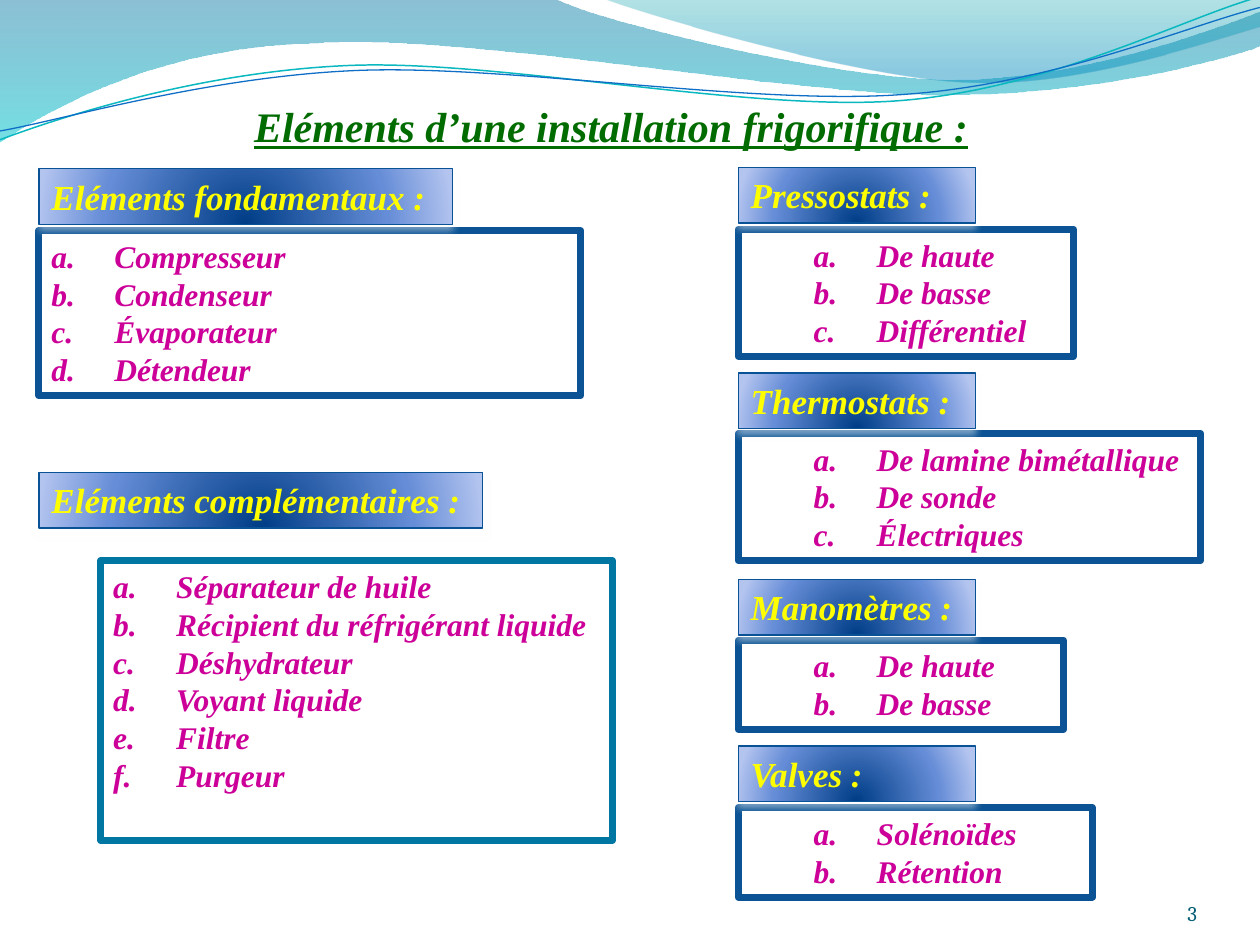
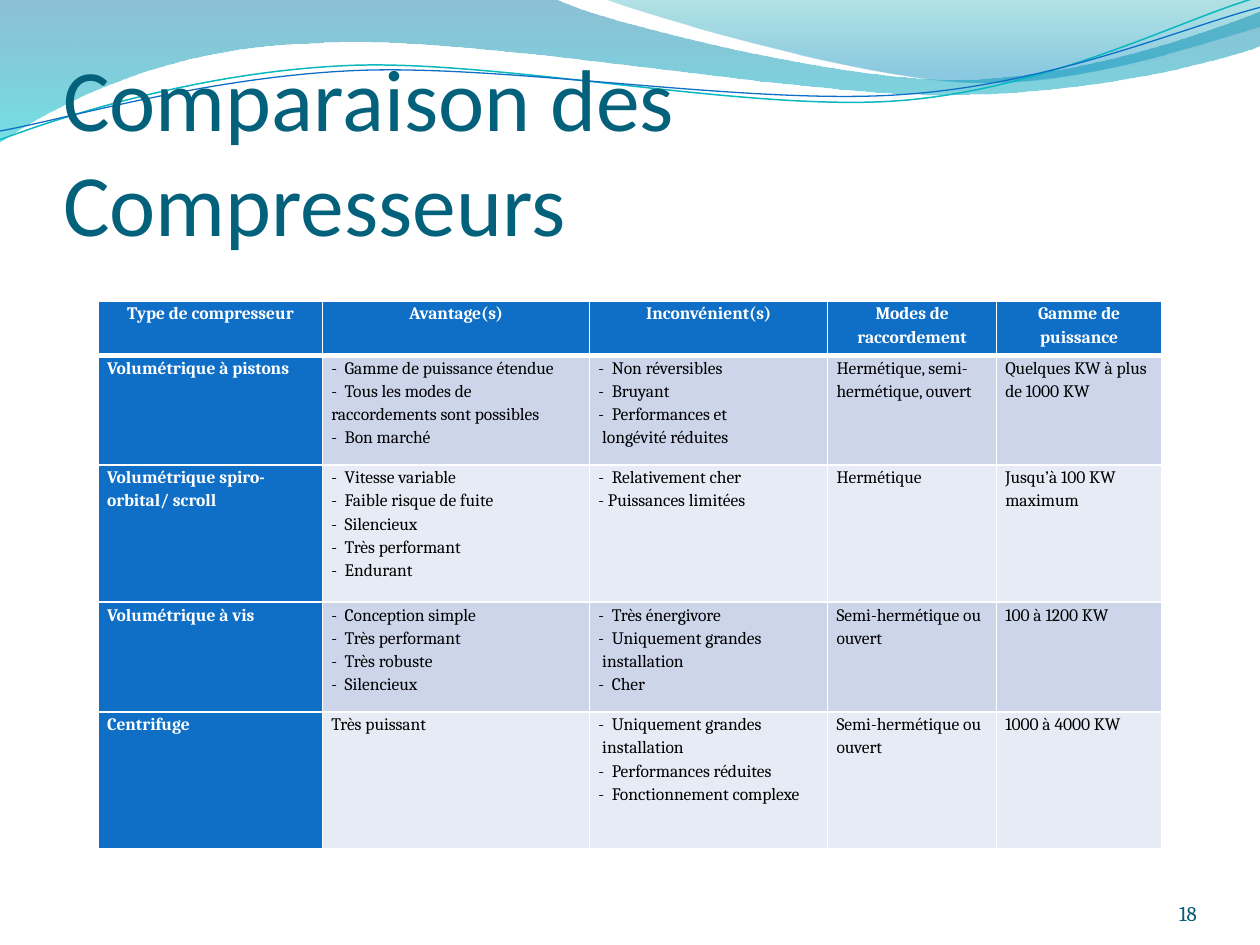
from math import cos, radians, sin

from lxml import etree
from pptx import Presentation
from pptx.dml.color import RGBColor
from pptx.enum.shapes import MSO_SHAPE
from pptx.enum.text import MSO_ANCHOR, MSO_AUTO_SIZE, PP_ALIGN
from pptx.oxml import parse_xml
from pptx.oxml.ns import nsdecls, qn
from pptx.util import Inches, Pt

RECT = MSO_SHAPE.RECTANGLE
TOP, BOTTOM = MSO_ANCHOR.TOP, MSO_ANCHOR.BOTTOM
LEFT, CENTER, RIGHT, JUSTIFY = PP_ALIGN.LEFT, PP_ALIGN.CENTER, PP_ALIGN.RIGHT, PP_ALIGN.JUSTIFY
NO_FIT = MSO_AUTO_SIZE.NONE
DASH = "-" + chr(160) + " "

COLORS = {
    "title": "04617B", "green": "006C00", "number": "045D75", "yellow": "FFFF00",
    "magenta": "CC0099", "box": "0B5394", "teal_box": "0076A3", "label_line": "095295",
    "white": "FFFFFF", "black": "000000", "blue": "0F6FC6",
    "band_dark": "CCD5EA", "band_light": "E7EBF5", "wave_line": "0AB8BF",
}
LABEL_STOPS = [(0, "003D87", 100), (68, "668DD7", 100), (100, "B3C4EF", 100)]
LABEL_PATH = '<a:path path="circle"><a:fillToRect l="50000" t="130000" r="50000" b="-30000"/></a:path>'
DOWN = '<a:lin ang="5400000" scaled="0"/>'

WAVES = [
    ([(0, 0), (4.4, -0.01),
      (4.76, 0.17, 6.64, 0.63, 7.58, 0.63), (8.53, 0.63, 9.58, 0.26, 10, 0.09), (10.01, 0.36),
      (9.83, 0.44, 8.7, 0.76, 7.46, 0.75), (6.22, 0.75, 3.82, 0.28, 2.57, 0.34),
      (1.29, 0.36, 0.46, 0.83, -0.01, 1.13)],
     [(0, "0074A1", 45), (100, "00C6CF", 55)]),
    ([(4.79, -0.01), (5.09, 0.11, 6.82, 0.62, 7.69, 0.65),
      (8.56, 0.69, 9.61, 0.32, 10, 0.21), (10, 0)],
     [(0, "00A1A9", 30), (80, "008BBF", 45)]),
]
TILT = 2.7
WAVE_LINES = [
    ([(0, 1.11), (0.48, 0.93, 1.58, 0.57, 2.77, 0.52), (3.95, 0.47, 5.93, 0.89, 7.13, 0.8),
      (8.33, 0.71, 9.38, 0.15, 9.98, -0.02)], "wave_line", 0.85),
    ([(0, 1.04), (0.47, 0.96, 1.64, 0.61, 2.83, 0.56), (4.03, 0.51, 5.97, 0.84, 7.17, 0.75),
      (8.36, 0.67, 9.41, 0.21, 10, 0.06)], "blue", 0.75),
]

CONTROLS = [
    ("Pressostats :", 1.33, 1.82, 2.66, ["De haute", "De basse", "Différentiel"]),
    ("Thermostats :", 2.96, 3.44, 3.67, ["De lamine bimétallique", "De sonde", "Électriques "]),
    ("Manomètres :", 4.6, 5.08, 2.58, ["De haute", "De basse"]),
    ("Valves :", 5.92, 6.41, 2.81, ["Solénoïdes", "Rétention  "]),
]
COMPRESSORS = [
    ["Type de compresseur", "Avantage(s)", "Inconvénient(s)", "Modes de raccordement",
     "Gamme de puissance"],
    ["Volumétrique à pistons",
     "-  Gamme de puissance étendue\n-  Tous les modes de\nraccordements sont possibles\n-  Bon marché",
     "-  Non réversibles\n-  Bruyant\n-  Performances et\n longévité réduites",
     "Hermétique, semi-hermétique, ouvert", "Quelques KW à plus de 1000 KW"],
    ["Volumétrique spiro-orbital/ scroll",
     "-  Vitesse variable\n-  Faible risque de fuite\n-  Silencieux\n-  Très performant\n-  Endurant",
     "-  Relativement cher\n- Puissances limitées", "Hermétique", "Jusqu’à 100 KW maximum"],
    ["Volumétrique à vis",
     "-  Conception simple\n-  Très performant\n-  Très robuste\n-  Silencieux",
     "-  Très énergivore\n-  Uniquement grandes\n installation\n-  Cher",
     "Semi-hermétique ou ouvert", "100 à 1200 KW"],
    ["Centrifuge", "Très puissant",
     "-  Uniquement grandes\n installation\n-  Performances réduites\n-  Fonctionnement complexe",
     "Semi-hermétique ou ouvert", "1000 à 4000 KW"],
]


def rgb(name):
    """Return the colour stored under a name."""
    return RGBColor.from_string(COLORS[name])


def pairs(part):
    """Split a flat tuple into points."""
    return list(zip(part[::2], part[1::2]))


def turn(path, degrees):
    """Turn a path about the middle of its end points."""
    cx, cy = (path[0][0] + path[-1][-2]) / 2, (path[0][1] + path[-1][-1]) / 2
    c, s = cos(radians(degrees)), sin(radians(degrees))
    return [tuple(v for x, y in pairs(part)
                  for v in (cx + (x - cx) * c - (y - cy) * s, cy + (x - cx) * s + (y - cy) * c))
            for part in path]


class Deck:
    """Holds the presentation, its style and the current slide."""

    def __init__(self):
        """Open an empty presentation of 10 by 7.5 inches."""
        self.prs = Presentation()
        self.prs.slide_width, self.prs.slide_height = Inches(10), Inches(7.5)

    def slide(self, number):
        """Start a slide with the waves and its number."""
        self.s = self.prs.slides.add_slide(self.prs.slide_layouts[5])
        for path, stops in WAVES:
            sp = self.freeform(path, True)
            self.gradient(sp, stops, DOWN)
            sp.line.fill.background()
        for path, color, width in WAVE_LINES:
            sp = self.freeform(turn(path, TILT), False)
            sp.rotation = 360 - TILT
            sp.fill.background()
            self.outline(sp, color, width)
        sp = self.s.shapes.add_textbox(Inches(8.67), Inches(6.95), Inches(0.83), Inches(0.4))
        tf = self.frame(sp, BOTTOM, (0, 0, 0, 0))
        self.text(tf.paragraphs[0], number, 12, "Cambria", "number", RIGHT)

    def freeform(self, path, close):
        """Draw an outline of lines and cubic curves without shadow."""
        points = [(Inches(x), Inches(y)) for part in path for x, y in pairs(part)]
        builder = self.s.shapes.build_freeform(*points[0])
        builder.add_line_segments(points[1:], close=close)
        sp = builder.convert_to_shape()
        sp.shadow.inherit = False
        segments = iter(list(sp._element.iter(qn("a:lnTo"))))
        for part in path[1:]:
            first = next(segments)
            if len(part) == 6:
                curve = etree.Element(qn("a:cubicBezTo"))
                first.addprevious(curve)
                for segment in (first, next(segments), next(segments)):
                    curve.append(segment[0])
                    segment.getparent().remove(segment)
        return sp

    def gradient(self, sp, stops, direction):
        """Fill a shape with a gradient."""
        gs = "".join(
            f'<a:gs pos="{pos * 1000}"><a:srgbClr val="{color}"><a:alpha val="{alpha * 1000}"/>'
            f'</a:srgbClr></a:gs>' for pos, color, alpha in stops)
        sp._element.spPr.insert(2, parse_xml(
            f'<a:gradFill {nsdecls("a")} rotWithShape="1"><a:gsLst>{gs}</a:gsLst>{direction}</a:gradFill>'))

    def outline(self, sp, color, width):
        """Set the line of a shape."""
        sp.line.color.rgb = rgb(color)
        sp.line.width = Pt(width)

    def frame(self, sp, anchor=TOP, insets=(0.1, 0.05, 0.1, 0.05)):
        """Prepare the text frame of a shape."""
        tf = sp.text_frame
        tf.word_wrap = True
        tf.auto_size = NO_FIT
        tf.vertical_anchor = anchor
        tf.margin_left, tf.margin_top, tf.margin_right, tf.margin_bottom = map(Inches, insets)
        return tf

    def text(self, p, text, size, font, color, align=LEFT, bold=False, italic=False, underline=False):
        """Add one formatted run to a paragraph."""
        p.alignment = align
        r = p.add_run()
        r.text = text
        f = r.font
        f.size, f.name, f.bold, f.italic, f.underline = Pt(size), font, bold, italic, underline
        f.color.rgb = rgb(color)

    def indent(self, p, margin, hanging):
        """Give a paragraph a hanging indent."""
        pPr = p._p.get_or_add_pPr()
        pPr.set("marL", str(Inches(margin)))
        pPr.set("indent", str(-Inches(hanging)))
        return pPr

    def title(self, text, box, anchor, insets, *style, **flags):
        """Place and format the title above the waves."""
        sp = self.s.shapes.title
        sp.left, sp.top, sp.width, sp.height = map(Inches, box)
        self.s.shapes._spTree.append(sp._element)
        self.text(self.frame(sp, anchor, insets).paragraphs[0], text, *style, **flags)

    def rect(self, x, y, w, h, line, width):
        """Draw an outlined rectangle without shadow."""
        sp = self.s.shapes.add_shape(RECT, Inches(x), Inches(y), Inches(w), Inches(h))
        sp.shadow.inherit = False
        self.outline(sp, line, width)
        return sp

    def label(self, text, x, y, w):
        """Draw a gradient heading with a soft light shadow."""
        sp = self.rect(x, y, w, 0.44, "label_line", 0.75)
        self.gradient(sp, LABEL_STOPS, LABEL_PATH)
        effects = sp._element.spPr.find(qn("a:effectLst"))
        shadow = etree.SubElement(effects, qn("a:outerShdw"), blurRad=str(Pt(4.5)),
                                  dist=str(Pt(3)), dir="5400000", rotWithShape="0")
        color = etree.SubElement(shadow, qn("a:srgbClr"), val=COLORS["white"])
        etree.SubElement(color, qn("a:alpha"), val="48000")
        self.text(self.frame(sp).paragraphs[0], text, 20, "Times New Roman", "yellow",
                  bold=True, italic=True)

    def letters(self, items, x, y, w, h, level=0, line="box"):
        """Draw a box with a lettered list."""
        sp = self.rect(x, y, w, h, line, 4)
        sp.fill.background()
        tf = self.frame(sp)
        for i, item in enumerate(items):
            p = tf.add_paragraph() if i else tf.paragraphs[0]
            p.level = level
            pPr = self.indent(p, 0.5 + 0.5 * level, 0.5)
            etree.SubElement(pPr, qn("a:buFont"), typeface="+mj-lt")
            etree.SubElement(pPr, qn("a:buAutoNum"), type="alphaLcPeriod")
            self.text(p, item, 18, "Times New Roman", "magenta", JUSTIFY, True, True)

    def borders(self, cell, top, bottom):
        """Give a cell white borders."""
        tcPr = cell._tc.get_or_add_tcPr()
        for side, width in (("L", 1), ("R", 1), ("T", top), ("B", bottom)):
            ln = etree.SubElement(tcPr, qn(f"a:ln{side}"), w=str(Pt(width)))
            fill = etree.SubElement(ln, qn("a:solidFill"))
            etree.SubElement(fill, qn("a:srgbClr"), val=COLORS["white"])

    def table(self, rows, x, y, widths, heights):
        """Draw a table with a header row, a header column and bands."""
        tbl = self.s.shapes.add_table(len(rows), len(widths), Inches(x), Inches(y),
                                      Inches(sum(widths)), Inches(sum(heights))).table
        tbl.horz_banding = False
        for column, w in zip(tbl.columns, widths):
            column.width = Inches(w)
        for i, row in enumerate(rows):
            tbl.rows[i].height = Inches(heights[i])
            for j, value in enumerate(row):
                cell = tbl.cell(i, j)
                head = i == 0 or j == 0
                self.borders(cell, 3 if i == 1 else 1, 3 if i == 0 else 1)
                cell.fill.solid()
                cell.fill.fore_color.rgb = rgb("blue" if head else "band_dark" if i % 2 else "band_light")
                cell.margin_left = cell.margin_right = Inches(0.07)
                cell.margin_top = cell.margin_bottom = 0
                lines = value.split("\n")
                for k, line in enumerate(lines):
                    p = cell.text_frame.add_paragraph() if k else cell.text_frame.paragraphs[0]
                    p.line_spacing = 1.15
                    if len(lines) > 1:
                        self.indent(p, 0.25, 0.25)
                    self.text(p, line.replace("-  ", DASH), 10, "Cambria",
                              "white" if head else "black", LEFT if i else CENTER, head)


def main():
    """Build both slides and save them."""
    d = Deck()

    d.slide("3")
    d.title("Eléments d’une installation frigorifique :", (0.16, 0.75, 9.38, 0.5), TOP,
            (0.1, 0.05, 0.1, 0.05), 24, "Times New Roman", "green", CENTER,
            bold=True, italic=True, underline=True)
    d.letters(["Compresseur", "Condenseur", "Évaporateur", "Détendeur"], 0.31, 1.83, 4.3, 1.31)
    d.letters(["Séparateur de huile", "Récipient du réfrigérant liquide", "Déshydrateur",
               "Voyant liquide", "Filtre", "Purgeur "], 0.8, 4.45, 4.06, 2.22, line="teal_box")
    d.label("Eléments fondamentaux :", 0.31, 1.34, 3.28)
    d.label("Eléments complémentaires :", 0.31, 3.75, 3.52)
    for heading, label_y, box_y, w, items in CONTROLS:
        d.letters(items, 5.86, box_y, w, 0.11 + 0.3 * len(items), 1)
        d.label(heading, 5.86, label_y, 1.88)

    d.slide("18")
    d.title("Comparaison des Compresseurs", (0.5, 0.77, 9, 1.25), BOTTOM, (0, 0.05, 0, 0),
            50, "Calibri", "title")
    d.table(COMPRESSORS, 0.78, 2.39, [1.78, 2.12, 1.89, 1.34, 1.31], [0.43, 0.87, 1.09, 0.87, 1.09])

    d.prs.save("out.pptx")


if __name__ == "__main__":
    main()
